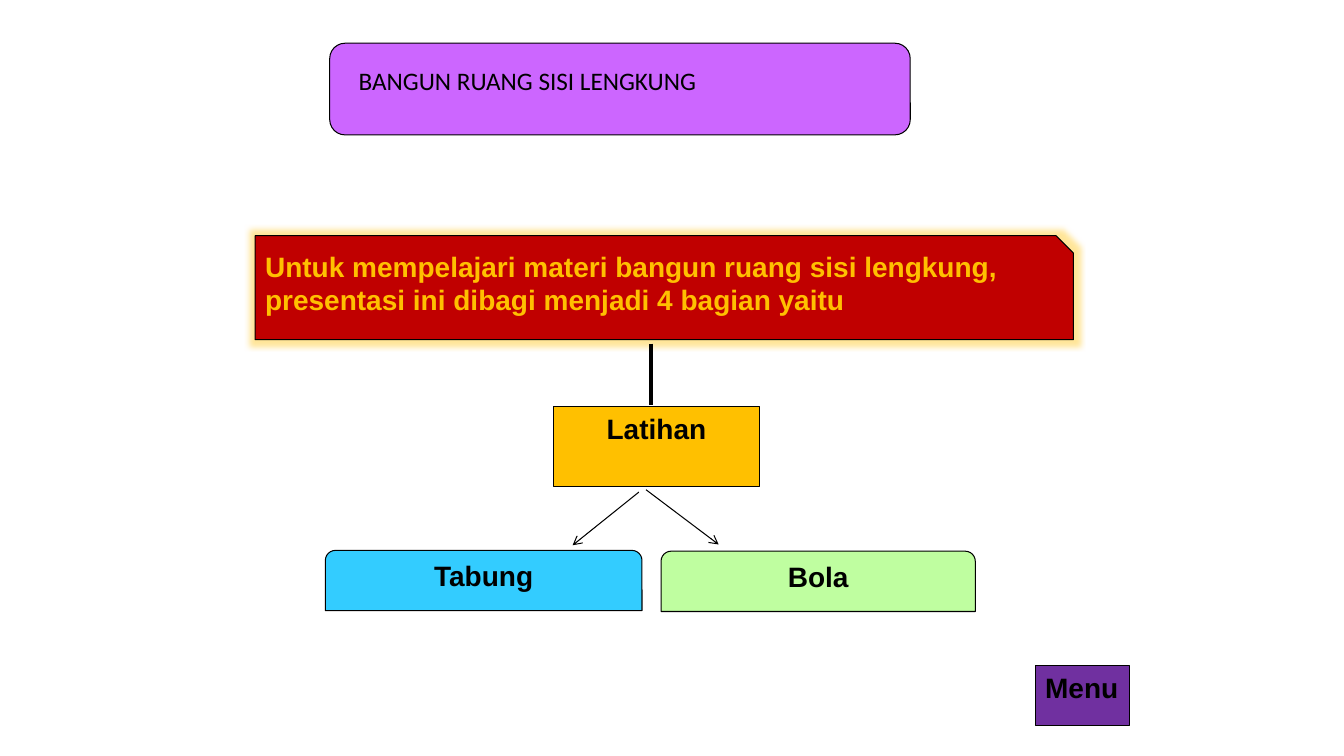
from dataclasses import dataclass

import pptx
import pptx.dml.color
import pptx.enum.shapes
import pptx.enum.text
import pptx.oxml.ns
import pptx.util
from lxml import etree

Cm = pptx.util.Cm
Pt = pptx.util.Pt
Preset = pptx.enum.shapes.MSO_SHAPE
Align = pptx.enum.text.PP_ALIGN
qn = pptx.oxml.ns.qn

BLACK = "000000"
GOLD = "FFC000"


@dataclass
class Box:
    preset: Preset
    left: float
    top: float
    width: float
    height: float
    fill: str
    text: str = ""
    text_color: str = BLACK
    align: Align = Align.CENTER
    glow: str = ""


@dataclass
class Link:
    start: tuple[float, float]
    end: tuple[float, float]
    weight: float = 0.75
    arrow: bool = True


TITLE_FRAME = Box(Preset.ROUNDED_RECTANGLE, 8.31, 1.09, 14.63, 2.31, "CC66FF")
BOXES = [
    Box(Preset.SNIP_1_RECTANGLE, 6.43, 5.94, 20.62, 2.62, "C00000",
        "Untuk mempelajari materi bangun ruang sisi lengkung, "
        "presentasi ini dibagi menjadi 4 bagian yaitu",
        GOLD, Align.LEFT, glow=GOLD),
    Box(Preset.RECTANGLE, 13.94, 10.24, 5.21, 2.01, GOLD, "Latihan"),
    Box(Preset.ROUND_2_SAME_RECTANGLE, 16.66, 13.89, 7.92, 1.52, "BFFEA0", "Bola"),
    Box(Preset.ROUND_2_SAME_RECTANGLE, 8.2, 13.87, 7.98, 1.52, "33CCFF", "Tabung"),
    Box(Preset.RECTANGLE, 26.09, 16.76, 2.37, 1.52, "7030A0", "Menu", align=Align.LEFT),
]
LINKS = [
    Link((16.41, 8.66), (16.41, 10.21), weight=3, arrow=False),
    Link((16.28, 12.34), (18.11, 13.72)),
    Link((16.1, 12.4), (14.43, 13.74)),
]


def rgb(value: str) -> pptx.dml.color.RGBColor:
    return pptx.dml.color.RGBColor.from_string(value)


def write_text(shape, text: str, font_name: str, size: float, color: str,
               bold: bool, align: Align) -> None:
    text_frame = shape.text_frame
    text_frame.word_wrap = True
    text_frame.vertical_anchor = pptx.enum.text.MSO_ANCHOR.TOP
    text_frame.text = text
    paragraph = text_frame.paragraphs[0]
    paragraph.alignment = align
    font = paragraph.runs[0].font
    font.name, font.size, font.bold = font_name, Pt(size), bold
    font.color.rgb = rgb(color)


def add_glow(shape, color: str) -> None:
    effects = shape._element.spPr.find(qn("a:effectLst"))
    glow = etree.SubElement(effects, qn("a:glow"), rad=str(Pt(8)))
    glow_color = etree.SubElement(glow, qn("a:srgbClr"), val=color)
    etree.SubElement(glow_color, qn("a:alpha"), val="40000")


def add_box(slide, box: Box) -> None:
    shape = slide.shapes.add_shape(
        box.preset, Cm(box.left), Cm(box.top), Cm(box.width), Cm(box.height))
    shape.shadow.inherit = False
    shape.fill.solid()
    shape.fill.fore_color.rgb = rgb(box.fill)
    shape.line.color.rgb = rgb(BLACK)
    shape.line.width = Pt(0.75)
    if box.glow:
        add_glow(shape, box.glow)
    if box.text:
        write_text(shape, box.text, "Arial", 20, box.text_color, True, box.align)


def add_link(slide, link: Link) -> None:
    connector = slide.shapes.add_connector(
        pptx.enum.shapes.MSO_CONNECTOR.STRAIGHT,
        *(Cm(value) for value in link.start + link.end))
    connector.line.color.rgb = rgb(BLACK)
    connector.line.width = Pt(link.weight)
    if link.arrow:
        etree.SubElement(connector.line._get_or_add_ln(), qn("a:tailEnd"), type="arrow")
    etree.SubElement(connector._element.spPr, qn("a:effectLst"))


def add_title(slide) -> None:
    add_box(slide, TITLE_FRAME)
    title = slide.shapes.add_textbox(Cm(8.79), Cm(1.52), Cm(13.44), Cm(1.02))
    write_text(title, "BANGUN RUANG SISI LENGKUNG", "Calibri", 18, BLACK, False, Align.LEFT)
    title.text_frame.auto_size = pptx.enum.text.MSO_AUTO_SIZE.SHAPE_TO_FIT_TEXT


def main() -> None:
    presentation = pptx.Presentation()
    presentation.slide_width = Cm(33.87)
    presentation.slide_height = Cm(19.05)
    slide = presentation.slides.add_slide(presentation.slide_layouts[6])

    # Title
    add_title(slide)

    # Topic boxes and menu button
    for box in BOXES:
        add_box(slide, box)

    # Lines between the levels
    for link in LINKS:
        add_link(slide, link)

    presentation.save("out.pptx")


if __name__ == "__main__":
    main()
